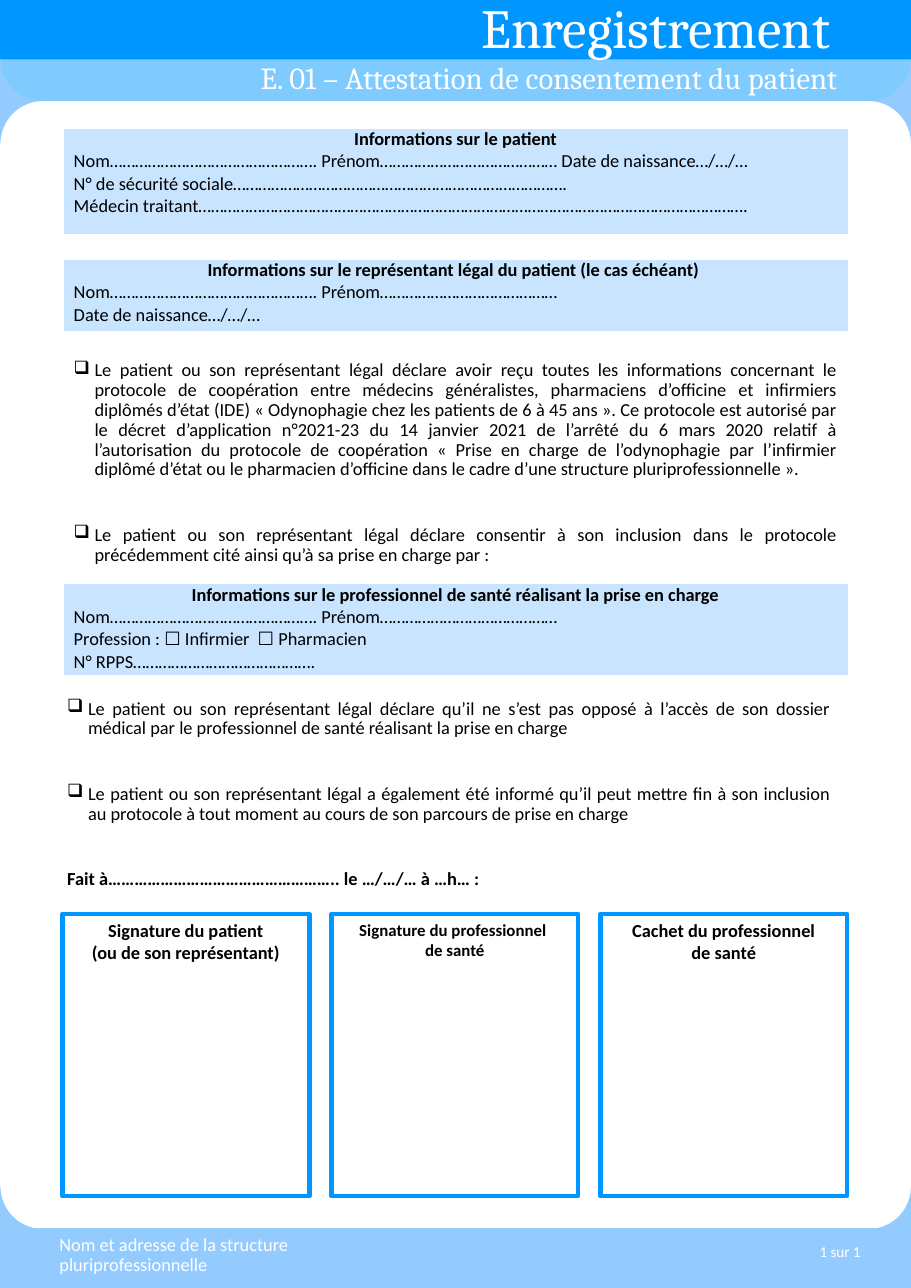
"""Build the patient consent form, one A4 page."""
from dataclasses import dataclass

import pptx
import pptx.dml.color
import pptx.enum.shapes
import pptx.enum.text
import pptx.oxml
import pptx.oxml.ns
import pptx.util
from pptx.util import Cm, Pt

ALIGN = pptx.enum.text.PP_ALIGN
ANCHOR = pptx.enum.text.MSO_ANCHOR
SHAPE = pptx.enum.shapes.MSO_SHAPE
qn = pptx.oxml.ns.qn


@dataclass(frozen=True)
class Theme:
    """Colours, fonts and type sizes of the form."""
    strong: str = "0096FF"
    soft: str = "93CBFF"
    white: str = "FFFFFF"
    black: str = "000000"
    heading_font: str = "Cambria"
    body_font: str = "Calibri"
    banner: float = 36
    title: float = 20
    body: float = 12
    small: float = 11
    page: float = 9.9
    tight: float = 0.9
    item_gap: float = 29.8


def rgb(value):
    """Turn a hex string into a colour."""
    return pptx.dml.color.RGBColor.from_string(value)


def element(tag, parent=None, **attributes):
    """Make a drawing element, under a parent if one is given."""
    node = pptx.oxml.parse_xml(f"<a:{tag} {pptx.oxml.ns.nsdecls('a')}/>")
    for key, value in attributes.items():
        node.set(key, str(value))
    if parent is not None:
        parent.append(node)
    return node


class Form:
    """Draw the parts of the form on one slide."""

    def __init__(self, slide, theme):
        """Keep the slide and the style."""
        self.shapes = slide.shapes
        self.theme = theme

    def fill(self, target, color, alpha=None):
        """Fill a shape or a cell, with optional opacity in percent."""
        target.fill.solid()
        target.fill.fore_color.rgb = rgb(color)
        if alpha:
            for node in target._element.iter() if hasattr(target, "_element") else target._tc.iter():
                if node.tag == qn("a:srgbClr"):
                    element("alpha", node, val=alpha * 1000)

    def block(self, box, color, kind=SHAPE.RECTANGLE, alpha=None):
        """Add a plain filled shape."""
        shape = self.shapes.add_shape(kind, *map(Cm, box))
        shape.shadow.inherit = False
        self.fill(shape, color, alpha)
        shape.line.fill.background()
        return shape

    def style(self, paragraph, size=None, color=None, font=None, bold=False, align=None):
        """Set the font and alignment of a paragraph."""
        if align is not None:
            paragraph.alignment = align
        paragraph.font.size = Pt(size or self.theme.body)
        paragraph.font.name = font or self.theme.body_font
        paragraph.font.bold = bold
        paragraph.font.color.rgb = rgb(color or self.theme.black)

    def label(self, box, text, anchor=ANCHOR.TOP, spacing=None, **style):
        """Add a one-paragraph text box."""
        frame = self.shapes.add_textbox(*map(Cm, box)).text_frame
        frame.word_wrap = True
        frame.vertical_anchor = anchor
        paragraph = frame.paragraphs[0]
        paragraph.text = text
        paragraph.line_spacing = spacing
        self.style(paragraph, **style)

    def statements(self, box, items, closing=None):
        """Add a box of justified checkbox items and a bold closing line."""
        frame = self.shapes.add_textbox(*map(Cm, box)).text_frame
        frame.word_wrap = True
        lines = items + ([closing] if closing else [])
        for index, line in enumerate(lines):
            paragraph = frame.add_paragraph() if index else frame.paragraphs[0]
            paragraph.text = line
            paragraph.line_spacing = self.theme.tight
            if index:
                paragraph.space_before = Pt(self.theme.item_gap)
            if line == closing:
                self.style(paragraph, bold=True)
                continue
            properties = paragraph._p.get_or_add_pPr()
            properties.set("marL", str(Cm(0.48)))
            properties.set("indent", str(Cm(-0.48)))
            element("buChar", properties, char="❑")
            self.style(paragraph, align=ALIGN.JUSTIFY)

    def panel(self, top, height, heading, fields):
        """Add a one-cell table with a centred heading and lines to fill in."""
        table = self.shapes.add_table(1, 1, Cm(1.45), Cm(top), Cm(18.11), Cm(height)).table
        table.first_row = table.horz_banding = False
        cell = table.cell(0, 0)
        cell.margin_left = cell.margin_right = Cm(0.25)
        cell.margin_top = cell.margin_bottom = 0
        self.fill(cell, self.theme.soft, 50)
        for position, side in enumerate(("lnL", "lnR", "lnT", "lnB")):
            border = element(side, w=Pt(1))
            element("srgbClr", element("solidFill", border), val=self.theme.white)
            cell._tc.tcPr.insert(position, border)
        frame = cell.text_frame
        frame.paragraphs[0].text = heading
        self.style(frame.paragraphs[0], bold=True, align=ALIGN.CENTER)
        for field in fields:
            paragraph = frame.add_paragraph()
            paragraph.text = field
            if "\t" in field:
                tabs = element("tabLst", paragraph._p.get_or_add_pPr())
                element("tab", tabs, pos=Cm(4.24), algn="l")
            self.style(paragraph)

    def signature(self, left, lines, size):
        """Add an outlined frame to sign or stamp in."""
        shape = self.shapes.add_shape(SHAPE.RECTANGLE, Cm(left), Cm(21.08), Cm(5.69), Cm(6.5))
        shape.shadow.inherit = False
        shape.fill.background()
        shape.line.color.rgb = rgb(self.theme.strong)
        shape.line.width = Pt(3)
        frame = shape.text_frame
        frame.vertical_anchor = ANCHOR.TOP
        frame.text = "\n".join(lines)
        for paragraph in frame.paragraphs:
            self.style(paragraph, size=size, bold=True, align=ALIGN.CENTER)


def main():
    """Compose the form and save it."""
    presentation = pptx.Presentation()
    presentation.slide_width, presentation.slide_height = Cm(21), Cm(29.7)
    theme = Theme()
    form = Form(presentation.slides.add_slide(presentation.slide_layouts[6]), theme)

    form.block((0, 1.24, 21, 1.09), theme.strong, alpha=50)
    form.block((0, 0, 21, 1.37), theme.strong)
    form.block((0, 28.32, 21, 1.38), theme.soft)
    for top in (1.35, 27.36):
        for left in (-1.12, 20.02):
            corner = form.block((left, top, 2.11, 1.96), theme.soft, SHAPE.PLAQUE)
            corner.adjustments[0] = 0.5

    form.label((10.85, -0.28, 10.15, 1.8), "Enregistrement", size=theme.banner,
               color=theme.white, font=theme.heading_font)
    form.label((3.91, 1.32, 15.65, 1.02), "E. 01 – Attestation de consentement du patient",
               ANCHOR.MIDDLE, theme.tight, size=theme.title, color=theme.white,
               font=theme.heading_font, align=ALIGN.RIGHT)

    full_name = "Nom…………………………………………. Prénom……………………………………"
    birth_date = "Date de naissance…/…/…"
    form.panel(2.95, 2.46, "Informations sur le patient", [
        f"{full_name} {birth_date}",
        "N° de sécurité sociale…………………………………………………………………….",
        "Médecin traitant………………………………………………………………………………………………………………….",
    ])
    form.panel(5.97, 1.68, "Informations sur le représentant légal du patient (le cas échéant) ",
               [full_name, birth_date])
    form.panel(13.46, 2.13, "Informations sur le professionnel de santé réalisant la prise en charge", [
        full_name, "Profession : ☐ Infirmier\t☐ Pharmacien", "N° RPPS…………………………………….",
    ])

    declarant = "Le patient ou son représentant légal"
    form.statements((1.45, 8.2, 18.11, 4.95), [
        f"{declarant} déclare avoir reçu toutes les informations concernant le protocole de "
        "coopération entre médecins généralistes, pharmaciens d’officine et infirmiers diplômés "
        "d’état (IDE) « Odynophagie chez les patients de 6 à 45 ans ». Ce protocole est autorisé "
        "par le décret d’application n°2021-23 du 14 janvier 2021 de l’arrêté du 6 mars 2020 "
        "relatif à l’autorisation du protocole de coopération « Prise en charge de l’odynophagie "
        "par l’infirmier diplômé d’état ou le pharmacien d’officine dans le cadre d’une structure "
        "pluriprofessionnelle ». ",
        f"{declarant} déclare consentir à son inclusion dans le protocole précédemment cité ainsi "
        "qu’à sa prise en charge par : ",
    ])
    form.statements((1.3, 16, 18.11, 4.95), [
        f"{declarant} déclare qu’il ne s’est pas opposé à l’accès de son dossier médical par le "
        "professionnel de santé réalisant la prise en charge ",
        f"{declarant} a également été informé qu’il peut mettre fin à son inclusion au protocole "
        "à tout moment au cours de son parcours de prise en charge ",
    ], "Fait à…………………………………………….. le …/…/… à …h… :")

    signatures = [
        (("Signature du patient", "(ou de son représentant)"), theme.body),
        (("Signature du professionnel ", "de santé"), theme.small),
        (("Cachet du professionnel", "de santé"), theme.body),
    ]
    for column, (lines, size) in enumerate(signatures):
        form.signature(1.44 + 6.2 * column, lines, size)

    form.label((1.12, 28.37, 6.86, 1.22), "Nom et adresse de la structure pluriprofessionnelle",
               spacing=theme.tight, color=theme.white)
    form.label((15.49, 28.47, 4.6, 0.79), "1 sur 1", ANCHOR.MIDDLE, size=theme.page,
               color=theme.white, align=ALIGN.RIGHT)
    presentation.save("out.pptx")


if __name__ == "__main__":
    main()
